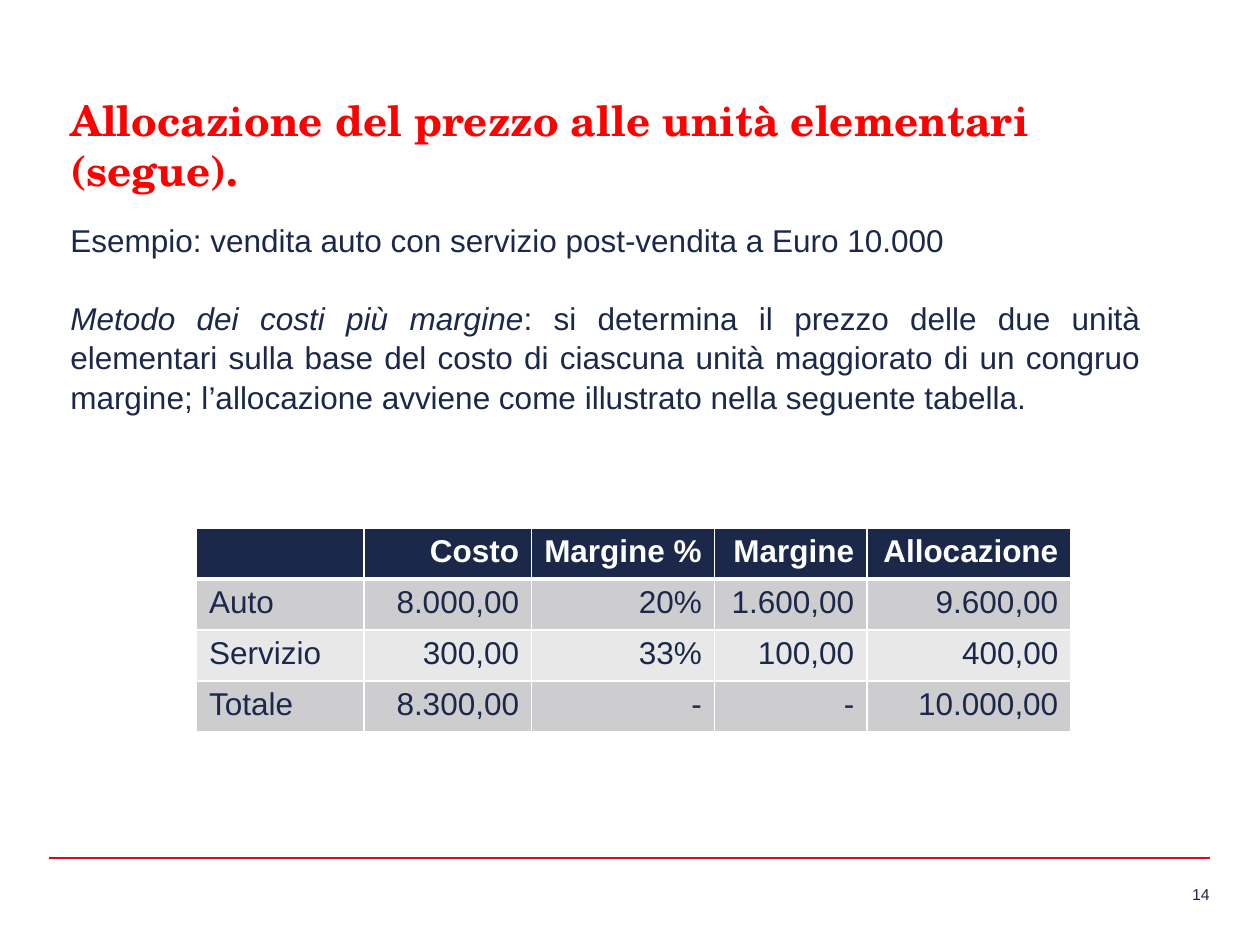
from lxml.etree import SubElement as Sub
from pptx import Presentation
from pptx.dml.color import RGBColor as Rgb
from pptx.enum.shapes import MSO_CONNECTOR as Link
from pptx.enum.text import PP_ALIGN as Align
from pptx.oxml.ns import qn
from pptx.util import Inches, Pt

TITLE = "Allocazione del prezzo alle unità elementari (segue)."
BODY = [
    [("Esempio: vendita auto con servizio post-vendita a Euro 10.000", False)],
    [
        ("Metodo dei costi più margine", True),
        (": si determina il prezzo delle due unità elementari sulla base del "
         "costo di ciascuna unità maggiorato di un congruo margine; "
         "l’allocazione avviene come illustrato nella seguente tabella.", False),
    ],
]
ROWS = [
    ["", "Costo", "Margine %", "Margine", "Allocazione"],
    ["Auto", "8.000,00", "20%", "1.600,00", "9.600,00"],
    ["Servizio", "300,00", "33%", "100,00", "400,00"],
    ["Totale", "8.300,00", "-", "-", "10.000,00"],
]
WIDTHS = [1.33, 1.33, 1.45, 1.21, 1.62]
HEIGHT = 0.405
PAGE = "14"


class Theme:
    navy, red, rule, white = "1B2849", "FF0000", "E30613", "FFFFFF"
    bands = ["E8E8E9", "CDCDD0"]
    sans, serif = "Arial", "TeX Gyre Schola"
    head, text, note = 24, 18, 9


def style(para, size, color, face=Theme.sans, bold=False, align=Align.LEFT):
    para.alignment = align
    font = para.font
    font.name, font.size, font.bold = face, Pt(size), bold
    font.color.rgb = Rgb.from_string(color)


def add_box(slide, x, y, w, h):
    frame = slide.shapes.add_textbox(*map(Inches, (x, y, w, h))).text_frame
    frame.word_wrap = True
    return frame


def add_body(slide):
    frame = add_box(slide, 0.46, 1.69, 8.69, 3.43)
    for i, parts in enumerate(BODY):
        para = frame.add_paragraph() if i else frame.paragraphs[0]
        style(para, Theme.text, Theme.navy, align=Align.JUSTIFY)
        para.line_spacing = 1.05
        if i:
            para.space_before = Pt(21.7)
        for text, slant in parts:
            run = para.add_run()
            run.text, run.font.italic = text, slant


def edge(cell, base):
    props = cell._tc.get_or_add_tcPr()
    for i, (side, size) in enumerate([("L", 1), ("R", 1), ("T", 1), ("B", base)]):
        line = props.makeelement(qn(f"a:ln{side}"), {"w": str(Pt(size))})
        fill = Sub(line, qn("a:solidFill"))
        Sub(fill, qn("a:srgbClr"), val=Theme.white)
        props.insert(i, line)


def add_grid(slide):
    size = (1.56, 4.19, sum(WIDTHS), HEIGHT * len(ROWS))
    grid = slide.shapes.add_table(len(ROWS), len(WIDTHS), *map(Inches, size)).table
    for col, width in zip(grid.columns, WIDTHS):
        col.width = Inches(width)
    for r, row in enumerate(ROWS):
        grid.rows[r].height = Inches(HEIGHT)
        top = r == 0
        for c, text in enumerate(row):
            cell = grid.cell(r, c)
            cell.text = text
            cell.fill.solid()
            cell.fill.fore_color.rgb = Rgb.from_string(
                Theme.navy if top else Theme.bands[r % 2])
            style(cell.text_frame.paragraphs[0], Theme.text,
                  Theme.white if top else Theme.navy, bold=top,
                  align=Align.RIGHT if c else Align.LEFT)
            edge(cell, 3 if top else 1)


def add_foot(slide):
    line = slide.shapes.add_connector(
        Link.STRAIGHT, *map(Inches, (0.39, 6.81, 9.6, 6.81)))
    line.line.color.rgb = Rgb.from_string(Theme.rule)
    line.line.width = Pt(1)
    Sub(line._element.spPr, qn("a:effectLst"))
    frame = add_box(slide, 8.91, 7.02, 0.69, 0.15)
    frame.margin_left = frame.margin_right = 0
    frame.margin_top = frame.margin_bottom = 0
    frame.text = PAGE
    style(frame.paragraphs[0], Theme.note, Theme.navy, align=Align.RIGHT)


def main():
    deck = Presentation()
    deck.slide_width, deck.slide_height = Inches(10), Inches(7.5)
    slide = deck.slides.add_slide(deck.slide_layouts[6])
    add_foot(slide)
    head = add_box(slide, 0.46, 0.7, 9.08, 0.91)
    head.text = TITLE
    style(head.paragraphs[0], Theme.head, Theme.red, Theme.serif, True)
    add_body(slide)
    add_grid(slide)
    deck.save("out.pptx")


if __name__ == "__main__":
    main()
